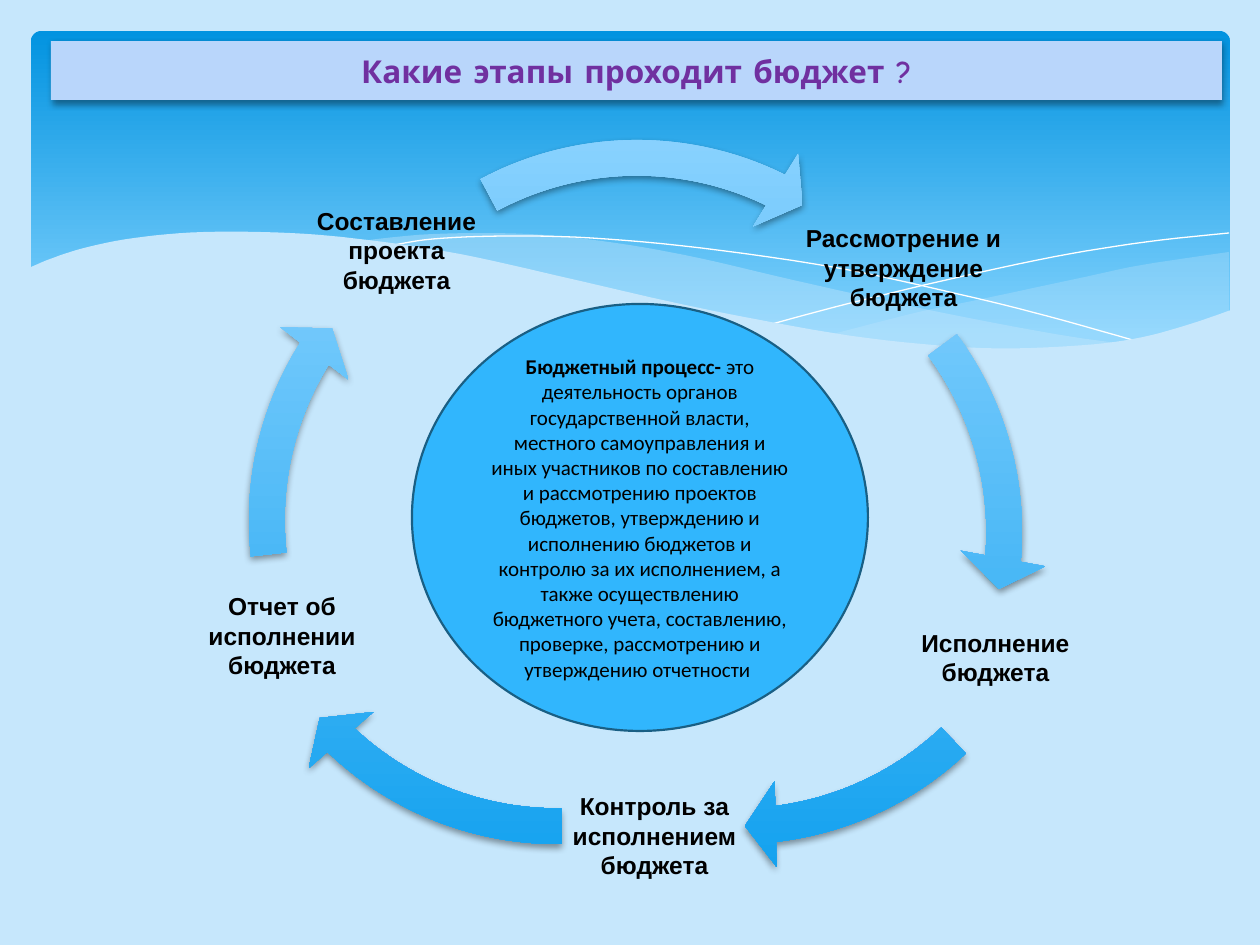
from dataclasses import dataclass

from pptx import Presentation
from pptx.dml.color import RGBColor
from pptx.enum.shapes import MSO_SHAPE
from pptx.enum.text import MSO_ANCHOR, PP_ALIGN
from pptx.oxml import parse_xml
from pptx.oxml.ns import nsdecls
from pptx.util import Emu, Pt


@dataclass(frozen=True)
class Theme:
    page: str = "C6E7FC"
    sky: tuple = ("0293E0", "83D3FE")
    arrow: tuple = ("8CD3FF", "14A2EF")
    banner: str = "B9D6FB"
    heading: str = "7030A0"
    core: str = "31B6FD"
    core_edge: str = "195F84"
    ink: str = "000000"
    streak: str = "FFFFFF"
    heading_font: tuple = (("name", "Comic Neue"), ("size", Pt(18)), ("bold", True))
    stage_font: tuple = (("name", "Arial"), ("size", Pt(14)), ("bold", True))
    core_font: tuple = (("name", "Calibri"), ("size", Pt(12)))


THEME = Theme()
PX = 914400 / 126
FINE = 10
STEPS = 6

HEADING = "Какие этапы проходит бюджет ?"
HEADING_BOX = (51, 41, 1171, 59)
SKY_BOX = (31, 31, 1199, 341)
CORE_BOX = (412, 304, 456, 427)
TERM = "Бюджетный процесс- "
MEANING = (
    "это деятельность органов государственной власти, местного самоуправления и иных "
    "участников по составлению и рассмотрению проектов бюджетов, утверждению и исполнению "
    "бюджетов и контролю за их исполнением, а также осуществлению бюджетного учета, "
    "составлению, проверке, рассмотрению и утверждению отчетности "
)

STAGES = [
    ("Рассмотрение и утверждение бюджета", (782, 198, 243, 139)),
    ("Исполнение бюджета", (906, 582, 179, 150)),
    ("Контроль за исполнением бюджета", (562, 766, 185, 139)),
    ("Отчет об исполнении бюджета", (197, 554, 170, 163)),
    ("Составление проекта бюджета", (300, 173, 193, 154)),
]

ARROW_SIZE = 714
ARROW_BAND, ARROW_TIP, ARROW_HEAD = 0.05, 3.36, 0.06
ARROWS = [
    ((333, 175), 2.91, 194.08),
    ((381, 155), 49.87, 28),
    ((200, 155), 80.06, 53.48),
    ((224, 163), 127.19, 104.23),
    ((280, 115), 177.71, 145.13),
]

WAVES = [
    (29, [
        [(1229, 252), (1142, 265), (1085, 277), (982, 299), (919, 312), (833, 334)],
        [(833, 334), (888, 342), (953, 348), (1026, 350), (1099, 346), (1168, 335), (1229, 311)],
    ]),
    (40, [
        [(1125, 344), (1055, 334), (934, 311), (793, 280), (699, 258), (616, 243),
         (529, 234), (433, 234), (360, 241)],
        [(360, 241), (456, 256), (566, 280), (668, 302), (757, 322), (838, 335),
         (927, 346), (1031, 350), (1125, 344)],
    ]),
]
STREAKS = [
    [(389, 246), (433, 239), (505, 236), (591, 238), (701, 248), (838, 268),
     (958, 294), (1047, 316), (1143, 343)],
    [(772, 324), (847, 304), (942, 281), (1053, 257), (1146, 242), (1229, 233)],
]
SHORE = [
    [(1231, 310), (1184, 326), (1133, 339), (1071, 346), (980, 348), (867, 338),
     (760, 320), (667, 301), (563, 277), (460, 254), (368, 240), (290, 233),
     (203, 232), (134, 238), (84, 248), (50, 259), (29, 268)],
    [(29, 415), (1231, 415)],
]


def px(*lengths):
    return [Emu(round(length * PX)) for length in lengths]


def rgb(code):
    return RGBColor.from_string(code)


def smooth(knots):
    padded = [knots[0], *knots, knots[-1]]
    curve = [knots[0]]
    if len(knots) == 2:
        return knots
    for a, b, c, d in zip(padded, padded[1:], padded[2:], padded[3:]):
        for step in range(1, STEPS + 1):
            t = step / STEPS
            curve.append(tuple(
                q + t * ((r - p) + t * ((2 * p - 5 * q + 4 * r - s) + t * (3 * (q - r) + s - p))) / 2
                for p, q, r, s in zip(a, b, c, d)
            ))
    return curve


def paint(shape, fill=None, edge=None, width=0):
    shape.shadow.inherit = False
    if fill is None:
        shape.fill.background()
    elif isinstance(fill, tuple):
        shape.fill.gradient()
        shape.fill.gradient_angle = 270
        for stop, code in zip(shape.fill.gradient_stops, fill):
            stop.color.rgb = rgb(code)
    else:
        shape.fill.solid()
        shape.fill.fore_color.rgb = rgb(fill)
    if edge:
        shape.line.color.rgb = rgb(edge)
        shape.line.width = Pt(width)
    else:
        shape.line.fill.background()
    return shape


def cast_shadow(shape):
    effects = shape.element.spPr.find("{*}effectLst")
    effects.append(parse_xml(
        f'<a:outerShdw {nsdecls("a")} blurRad="{Pt(4)}" dist="{Pt(2)}" dir="5400000" rotWithShape="0">'
        f'<a:srgbClr val="{THEME.ink}"><a:alpha val="38000"/></a:srgbClr></a:outerShdw>'
    ))


def draw_curves(shapes, curves, closed):
    points = [(x * FINE, y * FINE) for knots in curves for x, y in smooth(knots)]
    outline = shapes.build_freeform(*points[0], scale=PX / FINE)
    outline.add_line_segments(points[1:], close=closed)
    return outline.convert_to_shape()


def write(shape, runs, color, inset=None):
    frame = shape.text_frame
    frame.word_wrap = True
    frame.vertical_anchor = MSO_ANCHOR.MIDDLE
    if inset is not None:
        for side in ("left", "top", "right", "bottom"):
            setattr(frame, f"margin_{side}", inset)
    paragraph = frame.paragraphs[0]
    paragraph.alignment = PP_ALIGN.CENTER
    for words, formats in runs:
        run = paragraph.add_run()
        run.text = words
        run.font.color.rgb = rgb(color)
        for name, setting in dict(formats).items():
            setattr(run.font, name, setting)


def main():
    deck = Presentation()
    deck.slide_width, deck.slide_height = px(1260, 945)
    slide = deck.slides.add_slide(deck.slide_layouts[5])
    shapes = slide.shapes
    slide.background.fill.solid()
    slide.background.fill.fore_color.rgb = rgb(THEME.page)

    sky = paint(shapes.add_shape(MSO_SHAPE.ROUNDED_RECTANGLE, *px(*SKY_BOX)), THEME.sky)
    sky.adjustments[0] = 0.03
    sky.fill.gradient_stops[1].position = 0.9
    for opacity, curves in WAVES:
        wave = paint(draw_curves(shapes, curves, True), THEME.page)
        tint = wave.element.spPr.find("{*}solidFill")[0]
        tint.append(parse_xml(f'<a:alpha {nsdecls("a")} val="{opacity * 1000}"/>'))
    for streak in STREAKS:
        paint(draw_curves(shapes, [streak], False), edge=THEME.streak)
    paint(draw_curves(shapes, SHORE, True), THEME.page)

    heading = shapes.title
    heading.element.getparent().append(heading.element)
    heading.left, heading.top, heading.width, heading.height = px(*HEADING_BOX)
    cast_shadow(paint(heading, THEME.banner))
    write(heading, [(HEADING, THEME.heading_font)], THEME.heading)

    for (stage, box), (corner, end, start) in zip(STAGES, ARROWS):
        label = shapes.add_textbox(*px(*box))
        write(label, [(stage, THEME.stage_font)], THEME.ink, Pt(1.4))
        arrow = shapes.add_shape(MSO_SHAPE.CIRCULAR_ARROW, *px(*corner, ARROW_SIZE, ARROW_SIZE))
        for place, amount in enumerate((ARROW_BAND, ARROW_TIP, end, start, ARROW_HEAD)):
            arrow.adjustments[place] = amount
        cast_shadow(paint(arrow, THEME.arrow))

    core = paint(shapes.add_shape(MSO_SHAPE.OVAL, *px(*CORE_BOX)), THEME.core, THEME.core_edge, 1.25)
    write(core, [
        (TERM, (*THEME.core_font, ("bold", True))),
        (MEANING, (*THEME.core_font, ("bold", False))),
    ], THEME.ink)
    deck.save("out.pptx")


if __name__ == "__main__":
    main()
